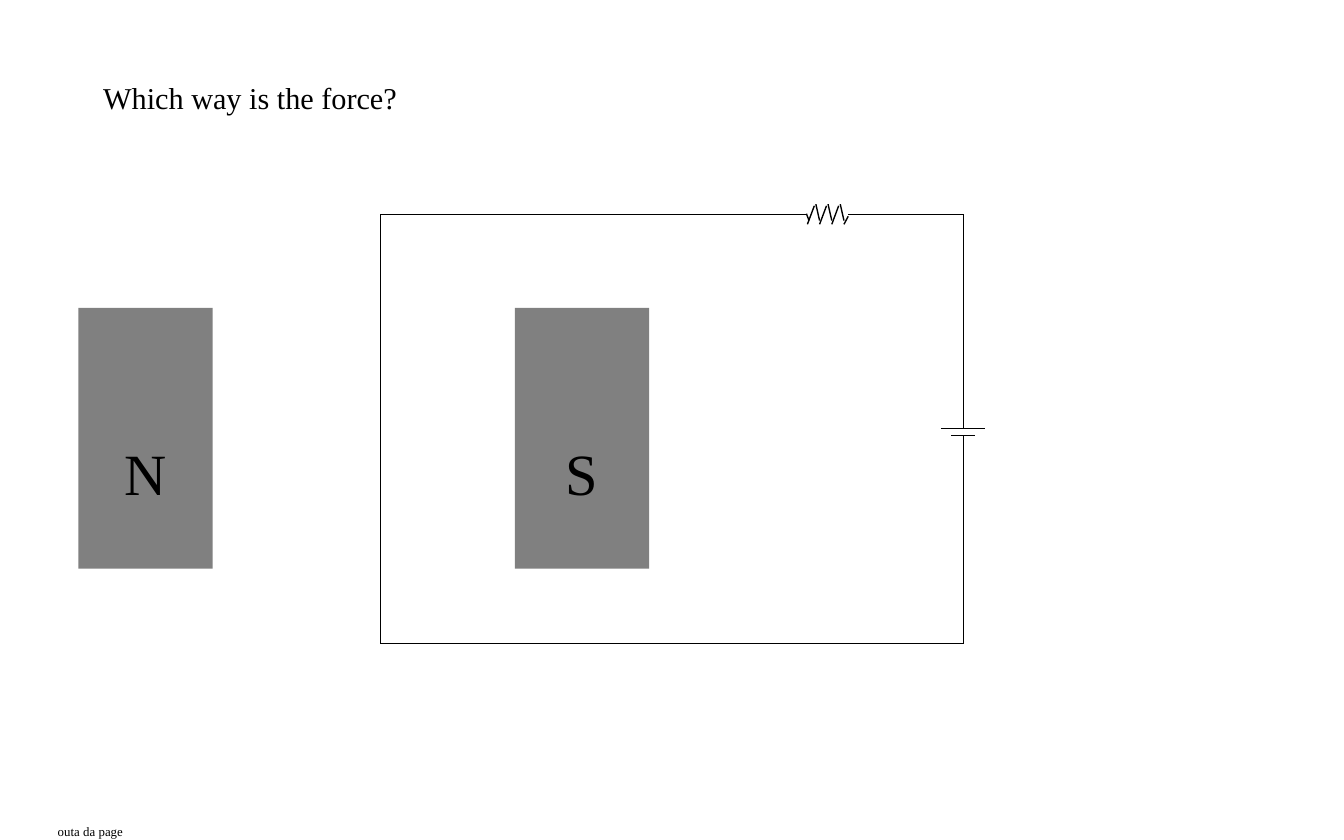
"""Build a slide asking for the force on a circuit between two magnet poles."""
from lxml.etree import SubElement
from pptx import Presentation
from pptx.dml.color import RGBColor
from pptx.enum.shapes import MSO_CONNECTOR, MSO_SHAPE
from pptx.enum.text import MSO_ANCHOR, MSO_AUTO_SIZE, PP_ALIGN
from pptx.oxml.ns import qn
from pptx.util import Cm, Pt

BLACK = RGBColor(0, 0, 0)
GREY = RGBColor(128, 128, 128)


def write(shape, text, size):
    frame = shape.text_frame
    frame.text = text
    frame.word_wrap = False
    run = frame.paragraphs[0].runs[0]
    run.font.name = "Times New Roman"
    run.font.size = Pt(size)
    run.font.color.rgb = BLACK
    run._r.get_or_add_rPr().set("baseline", "-25000")
    return frame


def draw(shapes, *ends):
    line = shapes.add_connector(MSO_CONNECTOR.STRAIGHT, *map(Cm, ends))
    line.line.color.rgb = BLACK
    line.line.width = Pt(0.75)
    SubElement(line._element.spPr, qn("a:effectLst"))


deck = Presentation()
deck.slide_width, deck.slide_height = Cm(25.4), Cm(15.88)
slide = deck.slides.add_slide(deck.slide_layouts[6])
shapes = slide.shapes

for text, size, left, top, width, height in (
    ("Which way is the force?", 28, 1.7, 0.71, 10.21, 1.45),
    ("outa da page", 12, 0.84, 15.16, 2.67, 0.76),
):
    box = shapes.add_textbox(Cm(left), Cm(top), Cm(width), Cm(height))
    frame = write(box, text, size)
    frame.auto_size = MSO_AUTO_SIZE.SHAPE_TO_FIT_TEXT

for pole, left in (("N", 1.48), ("S", 9.73)):
    magnet = shapes.add_shape(
        MSO_SHAPE.RECTANGLE, Cm(left), Cm(5.82), Cm(2.54), Cm(4.93))
    magnet.shadow.inherit = False
    magnet.fill.solid()
    magnet.fill.fore_color.rgb = GREY
    magnet.line.fill.background()
    frame = write(magnet, pole, 54)
    frame.vertical_anchor = MSO_ANCHOR.MIDDLE
    frame.paragraphs[0].alignment = PP_ALIGN.CENTER

west, east, north, south = 7.19, 18.21, 4.06, 12.17

cell = shapes.add_group_shape().shapes
draw(cell, 17.78, 8.1, 18.62, 8.1)
draw(cell, 17.98, 8.23, 18.42, 8.23)
draw(cell, east, 8.1, east, 7.59)
draw(cell, east, 8.76, east, 8.23)

coil = shapes.add_group_shape().shapes
for turn in range(3):
    right = 15.95 - 0.23 * turn
    draw(coil, right, 4.17, right - 0.07, 3.86)
    draw(coil, right - 0.1, 3.89, right - 0.23, 4.24)
draw(coil, 15.29, 4.17, 15.24, 4.04)
draw(coil, 16.03, 4.09, 15.95, 4.24)
draw(coil, 15.24, north, 14.81, north)
draw(coil, 16.43, north, 16.03, north)

for ends in (
    (east, 7.77, east, north),
    (16.31, north, east, north),
    (west, north, 15.04, north),
    (east, south, east, 8.28),
    (west, south, west, north),
    (west, south, east, south),
):
    draw(shapes, *ends)

deck.save("out.pptx")
